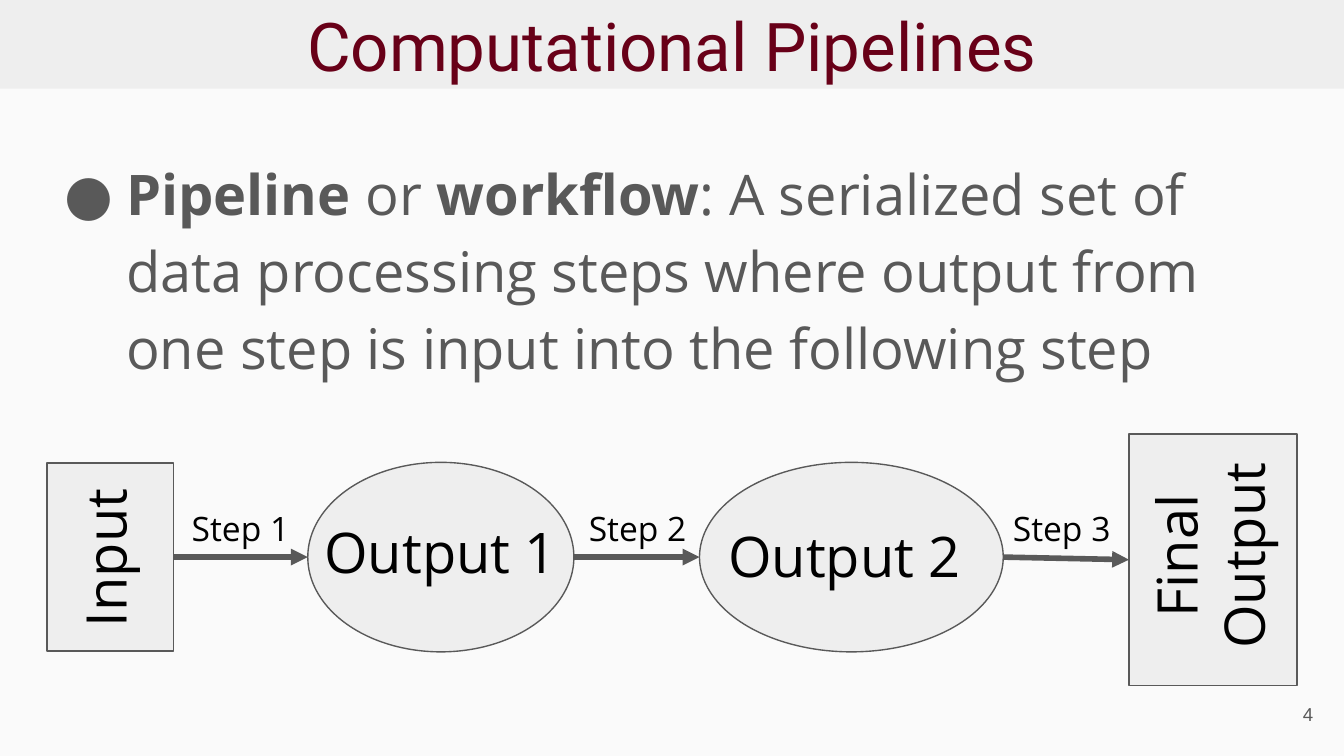
from itertools import pairwise

from lxml import etree
from pptx import Presentation
from pptx.dml.color import RGBColor
from pptx.enum.shapes import MSO_CONNECTOR, MSO_SHAPE
from pptx.enum.text import MSO_ANCHOR, PP_ALIGN
from pptx.oxml.ns import qn
from pptx.util import Emu, Inches, Pt

RECT, OVAL = MSO_SHAPE.RECTANGLE, MSO_SHAPE.OVAL
STRAIGHT = MSO_CONNECTOR.STRAIGHT
LEFT, CENTER, RIGHT = PP_ALIGN.LEFT, PP_ALIGN.CENTER, PP_ALIGN.RIGHT
TOP, MIDDLE = MSO_ANCHOR.TOP, MSO_ANCHOR.MIDDLE
COLORS = {"page": "FAFAFA", "panel": "EEEEEE", "title": "680018",
          "gray": "595959", "black": "000000"}

# Content; boxes are left, top, width, height in percent of the slide
TITLE = "Computational Pipelines"
TITLE_BOX = (0, 0, 100, 11.73)
DEFINITION = [
    ("Pipeline", True),
    (" or ", False),
    ("workflow", True),
    (": A serialized set of data processing steps where output from "
     "one step is input into the following step", False),
]
DEFINITION_BOX = (3.4, 17.96, 93.2, 35.2)
PAGE_NUMBER = "4"
NUMBER_BOX = (92.7, 90.67, 6, 7.64)

# Shapes and labels: centre x, centre y, width, height in percent
STAGES = [
    {"lines": ["Input"], "kind": RECT, "rot": 270,
     "shape": (8.2, 73.7, 9.4, 24.89), "label": (7.95, 73.78, 14.1, 13.16)},
    {"lines": ["Output 1"], "kind": OVAL, "rot": 0,
     "shape": (32.8, 73.7, 19.8, 25.07), "label": (32.8, 72.53, 24, 11.73)},
    {"lines": ["Output 2"], "kind": OVAL, "rot": 0,
     "shape": (63.35, 73.7, 22.6, 25.07), "label": (62.85, 72.53, 20.1, 10.67)},
    {"lines": ["Final", "Output"], "kind": RECT, "rot": 270,
     "shape": (90.25, 74.04, 12.5, 33.24), "label": (90.2, 73.51, 16, 22.22)},
]
# Step names: text, centre x, width
STEPS = [("Step 1", 17.9, 10), ("Step 2", 47.45, 9.3), ("Step 3", 79, 10)]
STEP_Y, STEP_H = 69.24, 7.64

prs = Presentation()
prs.slide_width = Inches(10)
prs.slide_height = Emu(prs.slide_width * 9 // 16)
s = prs.slides.add_slide(prs.slide_layouts[6])


def color(name):
    return RGBColor.from_string(COLORS[name])


def place(box):
    sides = (prs.slide_width, prs.slide_height) * 2
    return [Emu(round(v * side / 100)) for v, side in zip(box, sides)]


def centred(x, y, w, h):
    return x - w / 2, y - h / 2, w, h


def add_panel(kind, box, outlined=True):
    sp = s.shapes.add_shape(kind, *place(box))
    sp.shadow.inherit = False
    sp.fill.solid()
    sp.fill.fore_color.rgb = color("panel")
    if outlined:
        sp.line.color.rgb = color("gray")
        sp.line.width = Pt(0.75)
    else:
        sp.line.fill.background()
    return sp


def write(sp, paragraphs, size, font, ink, align=CENTER, anchor=TOP):
    """Each paragraph is a list of (text, bold) runs."""
    tf = sp.text_frame
    tf.word_wrap = True
    tf.vertical_anchor = anchor
    tf.margin_left = tf.margin_top = tf.margin_right = tf.margin_bottom = Inches(0.1)
    for i, runs in enumerate(paragraphs):
        p = tf.add_paragraph() if i else tf.paragraphs[0]
        p.alignment = align
        for text, bold in runs:
            r = p.add_run()
            r.text = text
            r.font.size, r.font.name, r.font.bold = Pt(size), font, bold
            r.font.color.rgb = color(ink)


def add_text(box, *args, **kwargs):
    sp = s.shapes.add_textbox(*place(box))
    write(sp, *args, **kwargs)
    return sp


def add_arrow(a, b):
    """Arrow from the right side of one stage to the left side of the next."""
    c = s.shapes.add_connector(STRAIGHT, a.left + a.width, a.top + a.height // 2,
                               b.left, b.top + b.height // 2)
    if a.auto_shape_type == RECT:
        c.begin_connect(a, 3)
    if b.auto_shape_type == RECT:
        c.end_connect(b, 1)
    c.line.color.rgb = color("gray")
    c.line.width = Pt(3)
    etree.SubElement(c.line._get_or_add_ln(), qn("a:tailEnd"), type="triangle")
    etree.SubElement(c._element.spPr, qn("a:effectLst"))


# Background and title band
s.background.fill.solid()
s.background.fill.fore_color.rgb = color("page")
write(add_panel(RECT, TITLE_BOX, outlined=False), [[(TITLE, False)]],
      36, "Roboto", "title", anchor=MIDDLE)

# Bulleted definition
body = add_text(DEFINITION_BOX, [DEFINITION], 30, "Open Sans", "gray", align=LEFT)
p = body.text_frame.paragraphs[0]
p.line_spacing, p.space_before = 1.15, Pt(10)
pPr = p._p.get_or_add_pPr()
pPr.set("marL", str(Inches(0.5)))
pPr.set("indent", str(Inches(-0.46)))
bullet_color = etree.SubElement(pPr, qn("a:buClr"))
etree.SubElement(bullet_color, qn("a:srgbClr"), val=COLORS["gray"])
etree.SubElement(pPr, qn("a:buFont"), typeface="Open Sans")
etree.SubElement(pPr, qn("a:buChar"), char="●")

# Page number
add_text(NUMBER_BOX, [[(PAGE_NUMBER, False)]], 10, "Arial", "gray",
         align=RIGHT, anchor=MIDDLE)

# Pipeline stages, arrows and labels
shapes = [add_panel(st["kind"], centred(*st["shape"])) for st in STAGES]
for a, b in pairwise(shapes):
    add_arrow(a, b)
for st in STAGES:
    label = add_text(centred(*st["label"]), [[(t, False)] for t in st["lines"]],
                     30, "Open Sans", "black")
    label.rotation = st["rot"]

# Step names above the arrows
for step, x, w in STEPS:
    add_text(centred(x, STEP_Y, w, STEP_H), [[(step, False)]],
             18, "Open Sans", "black")

prs.save("out.pptx")
